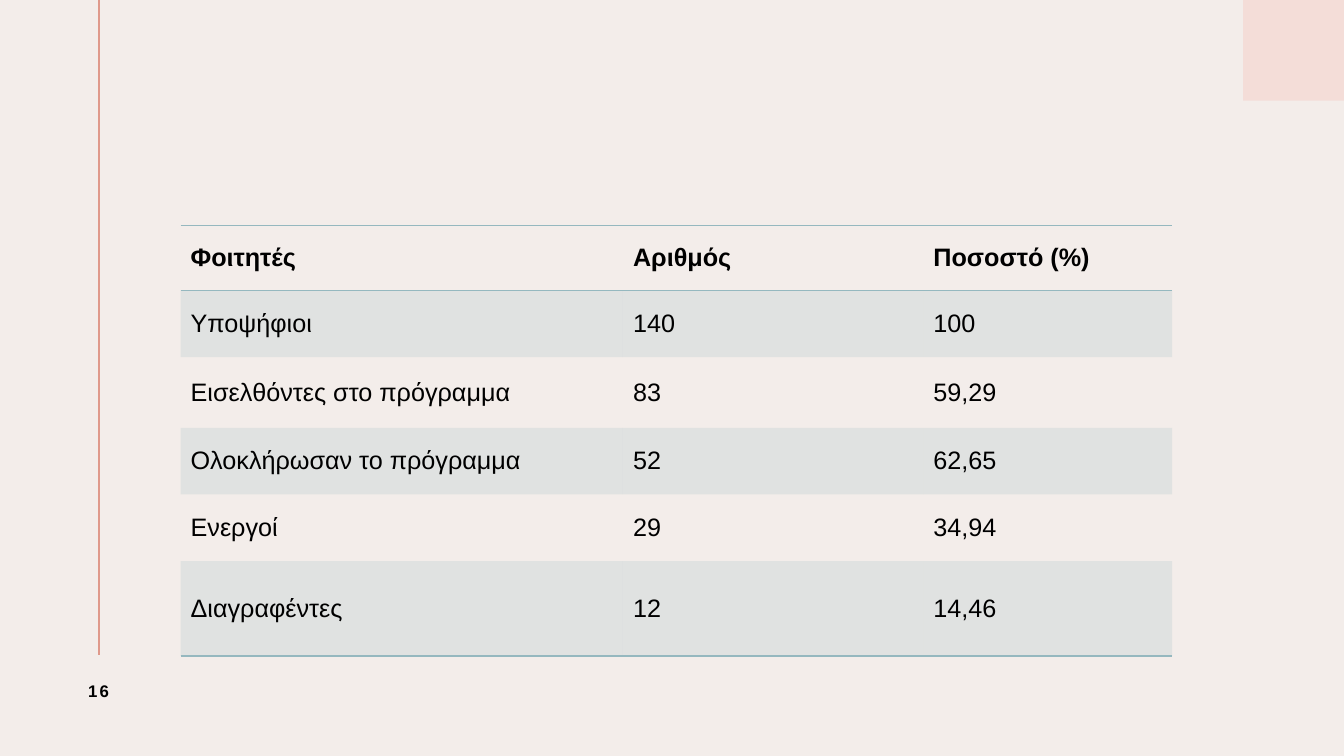
"""Build the slide with the table of student numbers and percentages."""
from lxml.etree import SubElement
from pptx import Presentation
from pptx.dml.color import RGBColor
from pptx.enum.shapes import MSO_CONNECTOR as Line, MSO_SHAPE as Shape
from pptx.enum.text import MSO_ANCHOR as Anchor, PP_ALIGN as Align
from pptx.oxml import parse_xml
from pptx.oxml.ns import nsdecls, qn
from pptx.util import Cm, Pt

ROWS = [
    ("Φοιτητές", "Αριθμός", "Ποσοστό (%)"),
    ("Υποψήφιοι", "140", "100"),
    ("Εισελθόντες στο πρόγραμμα", "83", "59,29"),
    ("Ολοκλήρωσαν το πρόγραμμα", "52", "62,65"),
    ("Ενεργοί", "29", "34,94"),
    ("Διαγραφέντες", "12", "14,46"),
]
WIDTHS = [11.15, 7.57, 6.27]
HEIGHTS = [1.63, 1.68, 1.78, 1.68, 1.68, 2.39]
PAGE = "16"

CREAM = RGBColor(0xF3, 0xED, 0xEA)
PINK = RGBColor(0xF4, 0xDD, 0xD8)
CORAL = RGBColor(0xDF, 0x99, 0x8B)
TEAL = RGBColor(0x95, 0xB8, 0xBF)
BLACK = RGBColor(0, 0, 0)


def write(frame, text, size=18, bold=False, align=Align.LEFT, space=None):
    par = frame.paragraphs[0]
    par.alignment = align
    run = par.add_run()
    run.text = text
    font = run.font
    font.name, font.size, font.bold = "Arial", Pt(size), bold
    font.color.rgb = BLACK
    if space:
        run._r.get_or_add_rPr().set("spc", str(space))


def edge(cell, sides):
    props = cell._tc.get_or_add_tcPr()
    for spot, side in enumerate("LRTB"):
        paint = "<a:noFill/>"
        if side in sides:
            paint = f'<a:solidFill><a:srgbClr val="{TEAL}"/></a:solidFill>'
        props.insert(spot, parse_xml(
            f'<a:ln{side} {nsdecls("a")} w="12700">{paint}</a:ln{side}>'))


def tint(cell):
    cell.fill.solid()
    cell.fill.fore_color.rgb = TEAL
    color = cell._tc.tcPr.find(".//" + qn("a:srgbClr"))
    SubElement(color, qn("a:alpha")).set("val", "20000")


def main():
    deck = Presentation()
    deck.slide_width, deck.slide_height = Cm(33.87), Cm(19.05)
    slide = deck.slides.add_slide(deck.slide_layouts[6])
    slide.background.fill.solid()
    slide.background.fill.fore_color.rgb = CREAM

    block = slide.shapes.add_shape(
        Shape.RECTANGLE, Cm(31.33), 0, Cm(2.54), Cm(2.54))
    block.shadow.inherit = False
    block.fill.solid()
    block.fill.fore_color.rgb = PINK
    block.line.fill.background()

    rule = slide.shapes.add_connector(
        Line.STRAIGHT, Cm(2.49), 0, Cm(2.49), Cm(16.51))
    rule.line.color.rgb = CORAL
    rule.line.width = Pt(1.5)
    SubElement(rule._element.spPr, qn("a:effectLst"))

    table = slide.shapes.add_table(
        len(ROWS), len(WIDTHS), Cm(4.55), Cm(5.69),
        Cm(sum(WIDTHS)), Cm(sum(HEIGHTS))).table
    table.horz_banding = False
    for col, width in zip(table.columns, WIDTHS):
        col.width = Cm(width)
    for row, height in zip(table.rows, HEIGHTS):
        row.height = Cm(height)
    lines = {0: "TB", 1: "T", len(ROWS) - 1: "B"}
    for r, row in enumerate(ROWS):
        for c, text in enumerate(row):
            cell = table.cell(r, c)
            cell.vertical_anchor = Anchor.MIDDLE
            write(cell.text_frame, text, bold=r == 0)
            if r % 2:
                tint(cell)
            else:
                cell.fill.background()
            edge(cell, lines.get(r, ""))

    box = slide.shapes.add_textbox(Cm(1.14), Cm(16.51), Cm(2.69), Cm(1.8))
    frame = box.text_frame
    frame.word_wrap = True
    frame.vertical_anchor = Anchor.MIDDLE
    write(frame, PAGE, size=12, bold=True, align=Align.CENTER, space=150)
    deck.save("out.pptx")


if __name__ == "__main__":
    main()
